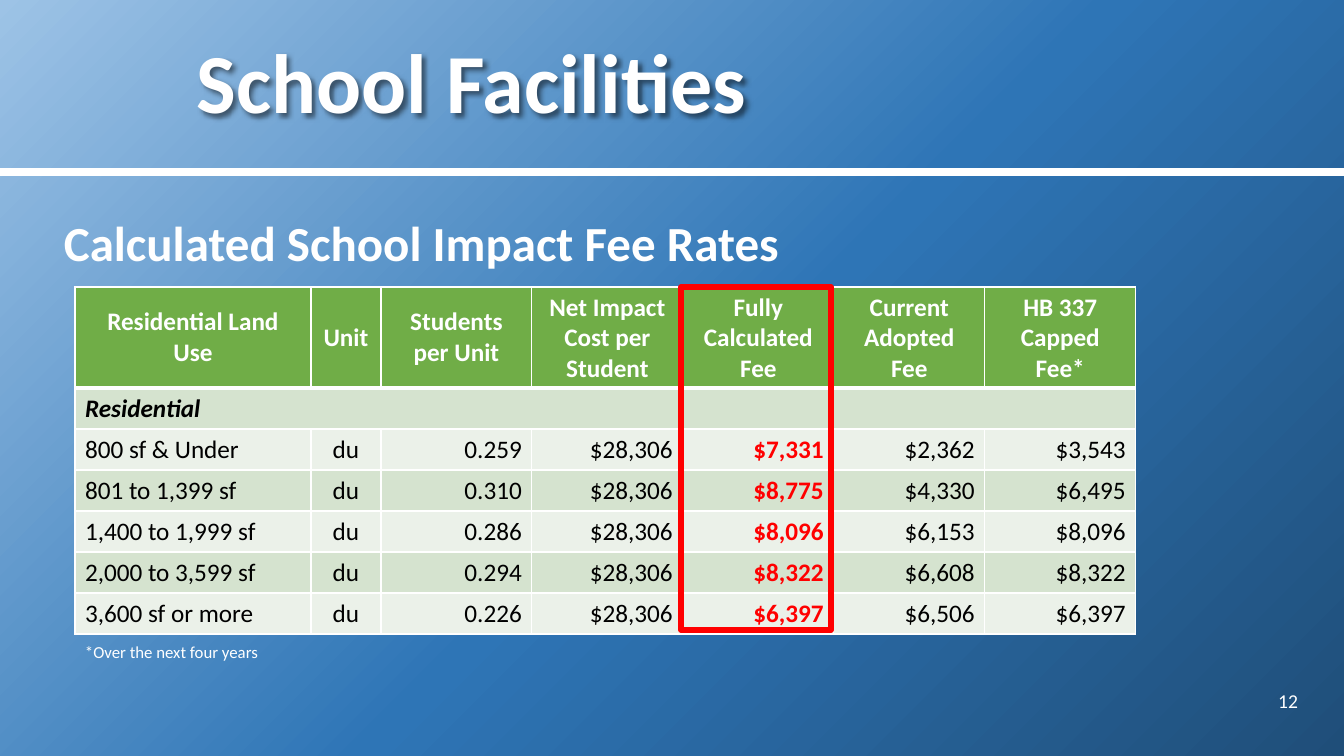
from lxml.etree import SubElement
from pptx import Presentation
from pptx.dml.color import RGBColor
from pptx.enum.shapes import MSO_CONNECTOR, MSO_SHAPE
from pptx.enum.text import MSO_ANCHOR, PP_ALIGN
from pptx.oxml import parse_xml
from pptx.oxml.ns import nsdecls, qn
from pptx.util import Pt

COLORS = {
    "white": "FFFFFF", "black": "000000", "red": "FF0000",
    "header": "70AD47", "band_dark": "D5E3CF", "band_light": "EBF1E9",
    "sky": "9DC3E6", "blue": "2E75B6", "navy": "1F4E79",
}
FONT = "Calibri"
LEFT, CENTER, RIGHT = PP_ALIGN.LEFT, PP_ALIGN.CENTER, PP_ALIGN.RIGHT
TOP, MIDDLE = MSO_ANCHOR.TOP, MSO_ANCHOR.MIDDLE

HEADINGS = ["Residential Land Use", "Unit", "Students per Unit",
            "Net Impact Cost per Student", "Fully Calculated Fee",
            "Current Adopted Fee", "HB 337 Capped Fee*"]
NET_COST = "$28,306"
FEES = [
    ("800 sf & Under", "0.259", "$7,331", "$2,362", "$3,543"),
    ("801 to 1,399 sf", "0.310", "$8,775", "$4,330", "$6,495"),
    ("1,400 to 1,999 sf", "0.286", "$8,096", "$6,153", "$8,096"),
    ("2,000 to 3,599 sf", "0.294", "$8,322", "$6,608", "$8,322"),
    ("3,600 sf or more", "0.226", "$6,397", "$6,506", "$6,397"),
]
COLUMN_WIDTHS = [236, 70] + [151] * 5
ROW_HEIGHTS = [101] + [41] * (len(FEES) + 1)
FULL_FEE_COLUMN = 4


def px(length):
    return round(length * 914400 / 100.8)


def rgb(color):
    return RGBColor.from_string(COLORS[color])


class FeeSlide:
    def __init__(self, presentation):
        self.slide = presentation.slides.add_slide(presentation.slide_layouts[6])
        self.shapes = self.slide.shapes

    def background(self, stops):
        marks = "".join(
            f'<a:gs pos="{percent * 1000}"><a:srgbClr val="{COLORS[color]}"/></a:gs>'
            for percent, color in stops)
        self.slide.background.fill.solid()
        properties = self.slide.background._cSld.bg.bgPr
        properties.replace(properties[0], parse_xml(
            f'<a:gradFill {nsdecls("a")} rotWithShape="1"><a:gsLst>{marks}</a:gsLst>'
            '<a:path path="circle"><a:fillToRect r="100000" b="100000"/></a:path>'
            '</a:gradFill>'))

    def style(self, paragraph, size, color, bold=False, italic=False, align=LEFT):
        paragraph.alignment = align
        for run in paragraph.runs:
            run.font.name = FONT
            run.font.size = Pt(size)
            run.font.color.rgb = rgb(color)
            run.font.bold = bold
            run.font.italic = italic

    def text(self, words, box, size, anchor=TOP, spacing=1.0, shadow=False, **look):
        label = self.shapes.add_textbox(*map(px, box))
        frame = label.text_frame
        frame.word_wrap = True
        frame.vertical_anchor = anchor
        frame.text = words
        frame.paragraphs[0].line_spacing = spacing
        self.style(frame.paragraphs[0], size, "white", **look)
        if shadow:
            label._element.spPr.append(parse_xml(
                f'<a:effectLst {nsdecls("a")}>'
                '<a:outerShdw blurRad="38100" dist="38100" dir="2700000" algn="tl">'
                '<a:srgbClr val="000000"><a:alpha val="50000"/></a:srgbClr>'
                '</a:outerShdw></a:effectLst>'))

    def rule(self, start, end, color, width):
        line = self.shapes.add_connector(
            MSO_CONNECTOR.STRAIGHT, *map(px, start + end))
        line.line.color.rgb = rgb(color)
        line.line.width = Pt(width)
        SubElement(line._element.spPr, qn("a:effectLst"))

    def frame(self, box, color, width):
        outline = self.shapes.add_shape(MSO_SHAPE.RECTANGLE, *map(px, box))
        outline.shadow.inherit = False
        outline.fill.background()
        outline.line.color.rgb = rgb(color)
        outline.line.width = Pt(width)

    def cell(self, cell, words, fill, borders, **look):
        properties = cell._tc.get_or_add_tcPr()
        for side, width in borders.items():
            properties.append(parse_xml(
                f'<a:ln{side} {nsdecls("a")} w="{Pt(width)}"><a:solidFill>'
                f'<a:srgbClr val="{COLORS["white"]}"/></a:solidFill></a:ln{side}>'))
        cell.fill.solid()
        cell.fill.fore_color.rgb = rgb(fill)
        cell.vertical_anchor = MIDDLE
        cell.text_frame.text = words
        self.style(cell.text_frame.paragraphs[0], 18, **look)

    def fee_table(self, left, top):
        box = (left, top, sum(COLUMN_WIDTHS), sum(ROW_HEIGHTS))
        table = self.shapes.add_table(
            len(ROW_HEIGHTS), len(COLUMN_WIDTHS), *map(px, box)).table
        table.first_row = table.horz_banding = False
        for column, width in zip(table.columns, COLUMN_WIDTHS):
            column.width = px(width)
        for row, height in zip(table.rows, ROW_HEIGHTS):
            row.height = px(height)

        group = ["Residential"] + [""] * (len(COLUMN_WIDTHS) - 1)
        rates = [(use, "du", students, NET_COST, *fees)
                 for use, students, *fees in FEES]
        for r, row in enumerate([HEADINGS, group, *rates]):
            borders = {"L": 1, "R": 1, "T": 3 if r == 1 else 1, "B": 3 if r == 0 else 1}
            for c, words in enumerate(row):
                if r == 0:
                    fill, look = "header", dict(color="white", bold=True, align=CENTER)
                else:
                    fill = "band_dark" if r % 2 else "band_light"
                    full_fee = c == FULL_FEE_COLUMN
                    look = dict(color="red" if full_fee else "black",
                                bold=full_fee or r == 1, italic=r == 1,
                                align=(LEFT, CENTER)[c] if c < 2 else RIGHT)
                self.cell(table.cell(r, c), words, fill, borders, **look)
        table.cell(1, 0).merge(table.cell(1, len(COLUMN_WIDTHS) - 1))


def main():
    presentation = Presentation()
    presentation.slide_width = px(1344)
    presentation.slide_height = px(756)
    page = FeeSlide(presentation)
    page.background([(0, "sky"), (53, "blue"), (100, "navy")])
    page.rule((-2, 172), (1344, 172), "white", 6)
    page.text("School Facilities", (187, 0, 1119, 172), 60, MIDDLE,
              spacing=0.9, shadow=True, bold=True)
    page.text("12", (1218, 681, 90, 40), 14, MIDDLE, align=RIGHT)
    page.text("Calculated School Impact Fee Rates", (54, 196, 1252, 531), 35,
              spacing=1.2, bold=True)
    page.fee_table(75, 287)
    page.frame((681, 287, 150, 343), "red", 4)
    page.text("*Over the next four years", (75, 637, 1107, 30), 12)
    presentation.save("out.pptx")


if __name__ == "__main__":
    main()
